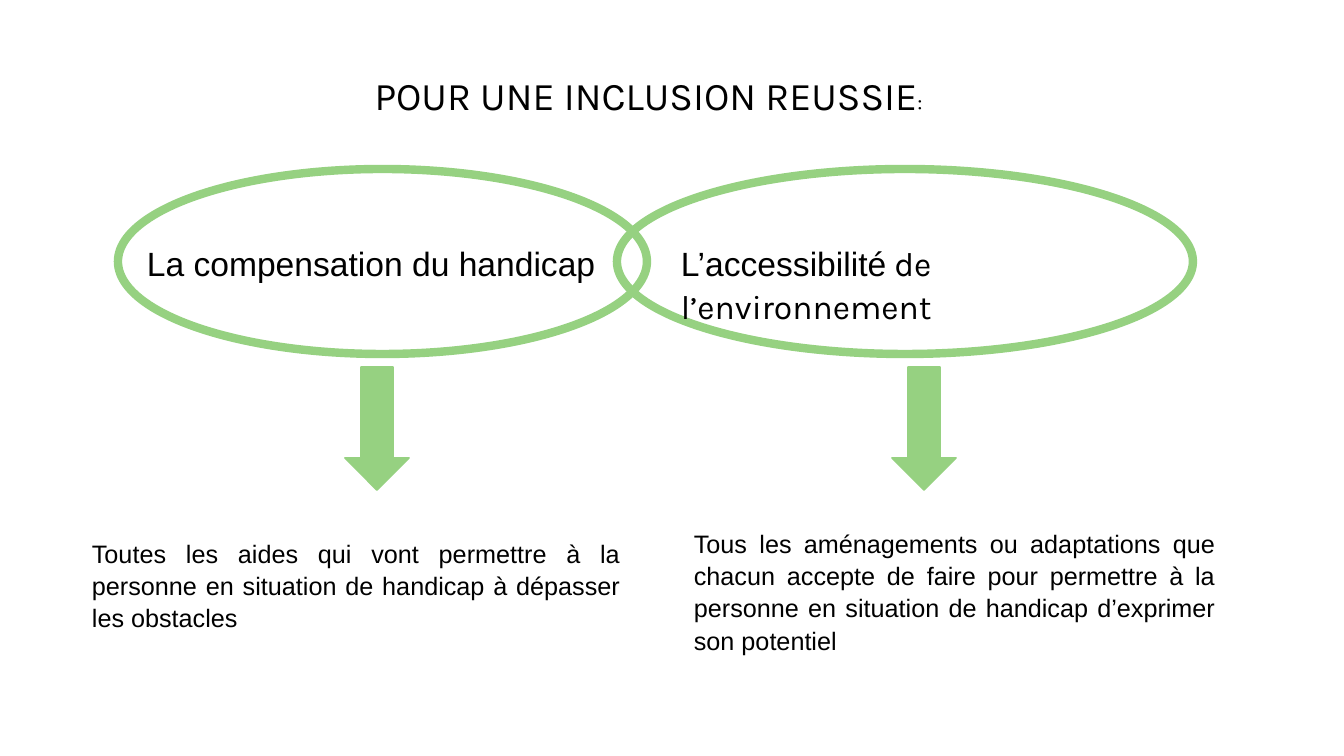
"""Build the slide on the two conditions of a successful inclusion."""
from pptx import Presentation
from pptx.dml.color import RGBColor
from pptx.enum.shapes import MSO_SHAPE
from pptx.enum.text import PP_ALIGN
from pptx.util import Pt

OVAL, ARROW = MSO_SHAPE.OVAL, MSO_SHAPE.DOWN_ARROW
LEFT, CENTER, JUSTIFY = PP_ALIGN.LEFT, PP_ALIGN.CENTER, PP_ALIGN.JUSTIFY
COLORS = {"green": "96D181", "text": "000000"}
SCALE = 914400 / 100.8

TITLE = [("POUR UNE INCLUSION REUSSIE", "Karla", 28), (":", "Karla", 16)]
PARTS = [
    {"oval": (118, 169, 529, 185), "arrow": (345, 367, 64, 123),
     "head": [("La compensation du handicap", "Arial", 24)],
     "head_box": (137, 235, 480, 53),
     "body": "Toutes les aides qui vont permettre à la personne en situation "
             "de handicap à dépasser les obstacles",
     "body_box": (82, 531, 548, 108)},
    {"oval": (617, 169, 576, 185), "arrow": (892, 367, 64, 123),
     "head": [("L’accessibilité", "Arial", 24),
              (" de l’environnement", "Karla", 24)],
     "head_box": (671, 235, 521, 53),
     "body": "Tous les aménagements ou adaptations que chacun accepte de faire "
             "pour permettre à la personne en situation de handicap d’exprimer "
             "son potentiel",
     "body_box": (684, 521, 541, 141)},
]


def px(*sizes):
    return [round(size * SCALE) for size in sizes]


def color(name):
    return RGBColor.from_string(COLORS[name])


def style(font, face, size):
    font.name, font.size = face, Pt(size)
    font.color.rgb = color("text")


def add_text(slide, box, runs, align, spacing=None):
    frame = slide.shapes.add_textbox(*px(*box)).text_frame
    frame.word_wrap = True
    para = frame.paragraphs[0]
    para.alignment = align
    if spacing:
        para.line_spacing = spacing
        para.space_after = Pt(8)
    if len(runs) == 1:
        style(para.font, *runs[0][1:])
    for text, face, size in runs:
        run = para.add_run()
        run.text = text
        if len(runs) > 1:
            style(run.font, face, size)


def add_shape(slide, kind, box, width, filled):
    shape = slide.shapes.add_shape(kind, *px(*box))
    shape.shadow.inherit = False
    if filled:
        shape.fill.solid()
        shape.fill.fore_color.rgb = color("green")
    else:
        shape.fill.background()
    shape.line.color.rgb = color("green")
    shape.line.width = Pt(width)


def main():
    deck = Presentation()
    deck.slide_width, deck.slide_height = px(1344, 756)
    slide = deck.slides.add_slide(deck.slide_layouts[6])
    add_text(slide, (82, 66, 1133, 57), TITLE, CENTER)
    for part in PARTS:
        add_shape(slide, OVAL, part["oval"], 6, False)
        add_shape(slide, ARROW, part["arrow"], 1.25, True)
        add_text(slide, part["head_box"], part["head"], LEFT, 1.07)
        add_text(slide, part["body_box"], [(part["body"], "Arial", 18)],
                 JUSTIFY, 1.07)
    deck.save("out.pptx")


if __name__ == "__main__":
    main()
